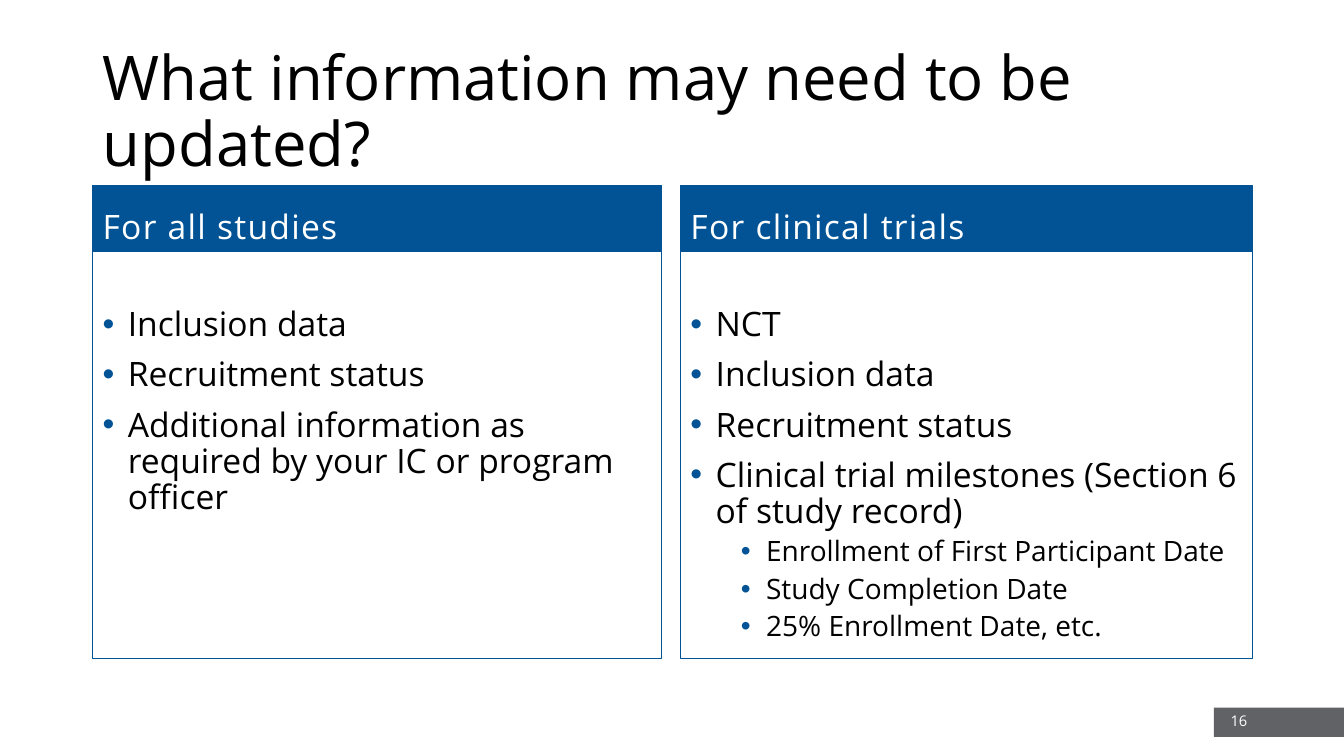
from dataclasses import dataclass

from lxml import etree
from pptx import Presentation
from pptx.dml.color import RGBColor
from pptx.enum.shapes import MSO_SHAPE
from pptx.enum.text import MSO_ANCHOR, PP_ALIGN
from pptx.oxml.ns import qn
from pptx.util import Inches, Pt

RECT = MSO_SHAPE.RECTANGLE
TOP, MIDDLE, BOTTOM = MSO_ANCHOR.TOP, MSO_ANCHOR.MIDDLE, MSO_ANCHOR.BOTTOM
LEFT, RIGHT = PP_ALIGN.LEFT, PP_ALIGN.RIGHT


@dataclass(frozen=True)
class Theme:
    """Colours, font and type sizes of the slide."""
    font: str = "Open Sans"
    blue: RGBColor = RGBColor(0x01, 0x53, 0x96)
    gray: RGBColor = RGBColor(0x61, 0x62, 0x65)
    black: RGBColor = RGBColor(0, 0, 0)
    white: RGBColor = RGBColor(255, 255, 255)
    title: float = 44
    body: float = 24
    sub: float = 20
    number: float = 10.5


THEME = Theme()
HEADER_TOP, HEADER_HEIGHT = 1.84, 0.66
BODY_TOP, BODY_HEIGHT = 2.5, 4.03
COLUMNS = [
    (0.92, 5.64, "For all studies", [
        (0, "Inclusion data"),
        (0, "Recruitment status"),
        (0, "Additional information as required by your IC or program officer"),
    ]),
    (6.75, 5.67, "For clinical trials", [
        (0, "NCT"),
        (0, "Inclusion data"),
        (0, "Recruitment status"),
        (0, "Clinical trial milestones (Section 6 of study record)"),
        (1, "Enrollment of First Participant Date"),
        (1, "Study Completion Date"),
        (1, "25% Enrollment Date, etc."),
    ]),
]


def add_run(p, text, size, color):
    """Add one run in the slide font."""
    r = p.add_run()
    r.text = text
    r.font.name = THEME.font
    r.font.size = Pt(size)
    r.font.color.rgb = color
    return r


def add_box(slide, left, top, width, height, fill=None, line=None):
    """Add a plain rectangle."""
    sp = slide.shapes.add_shape(RECT, Inches(left), Inches(top),
                                Inches(width), Inches(height))
    sp.shadow.inherit = False
    if fill is None:
        sp.fill.background()
    else:
        sp.fill.solid()
        sp.fill.fore_color.rgb = fill
    if line is None:
        sp.line.fill.background()
    else:
        sp.line.color.rgb = line
        sp.line.width = Pt(0.75)
    return sp


def set_bullet(p, level):
    """Give a paragraph a blue hanging bullet."""
    pPr = p._p.get_or_add_pPr()
    pPr.set("marL", str(Inches(0.25 + 0.5 * level)))
    pPr.set("indent", str(Inches(-0.25)))
    color = etree.SubElement(pPr, qn("a:buClr"))
    etree.SubElement(color, qn("a:srgbClr"), val=str(THEME.blue))
    etree.SubElement(pPr, qn("a:buFont"), typeface="Arial")
    etree.SubElement(pPr, qn("a:buChar"), char="•")


def add_title(slide, text):
    """Place and fill the title placeholder."""
    sp = slide.shapes.title
    sp.left, sp.top = Inches(0.92), Inches(0.4)
    sp.width, sp.height = Inches(11.5), Inches(1.45)
    tf = sp.text_frame
    tf.word_wrap = True
    tf.vertical_anchor = MIDDLE
    p = tf.paragraphs[0]
    p.alignment = LEFT
    p.line_spacing = 0.9
    add_run(p, text, THEME.title, THEME.black)


def add_header(slide, left, width, text):
    """Add the filled heading of a column."""
    sp = add_box(slide, left, HEADER_TOP, width, HEADER_HEIGHT,
                 THEME.blue, THEME.blue)
    tf = sp.text_frame
    tf.vertical_anchor = BOTTOM
    p = tf.paragraphs[0]
    p.alignment = LEFT
    p.line_spacing = 0.9
    r = add_run(p, text, THEME.body, THEME.white)
    r.font._element.set("spc", "90")


def add_bullets(slide, left, width, items):
    """Add the outlined bullet list of a column."""
    sp = add_box(slide, left, BODY_TOP, width, BODY_HEIGHT, line=THEME.blue)
    tf = sp.text_frame
    tf.vertical_anchor = TOP
    tf.margin_top = Inches(0.55)
    for i, (level, text) in enumerate(items):
        p = tf.add_paragraph() if i else tf.paragraphs[0]
        set_bullet(p, level)
        p.level = level
        p.alignment = LEFT
        p.line_spacing = 0.9
        if i:
            p.space_before = Pt(5 if level else 10)
        add_run(p, text, THEME.sub if level else THEME.body, THEME.black)


def add_page_number(slide, text):
    """Add the page number on its gray tab."""
    add_box(slide, 12.04, 7.02, 1.29, 0.29, fill=THEME.gray)
    sp = slide.shapes.add_textbox(Inches(9.47), Inches(6.95),
                                  Inches(3), Inches(0.4))
    tf = sp.text_frame
    tf.word_wrap = True
    tf.vertical_anchor = MIDDLE
    p = tf.paragraphs[0]
    p.alignment = RIGHT
    add_run(p, text, THEME.number, THEME.white)


def main():
    """Build and save the slide."""
    prs = Presentation()
    prs.slide_width, prs.slide_height = Inches(13.33), Inches(7.5)
    slide = prs.slides.add_slide(prs.slide_layouts[5])
    add_title(slide, "What information may need to be updated?")
    for left, width, heading, items in COLUMNS:
        add_header(slide, left, width, heading)
        add_bullets(slide, left, width, items)
    add_page_number(slide, "16")
    prs.save("out.pptx")


if __name__ == "__main__":
    main()
